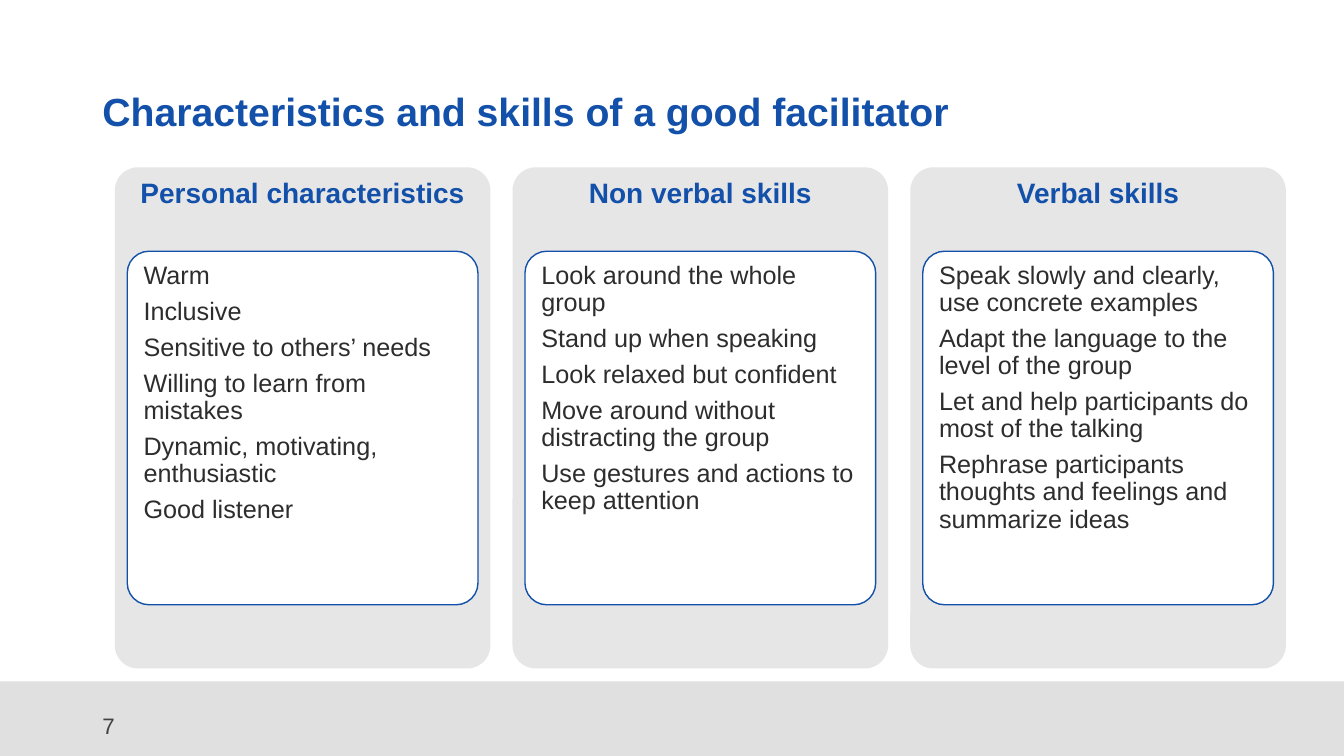
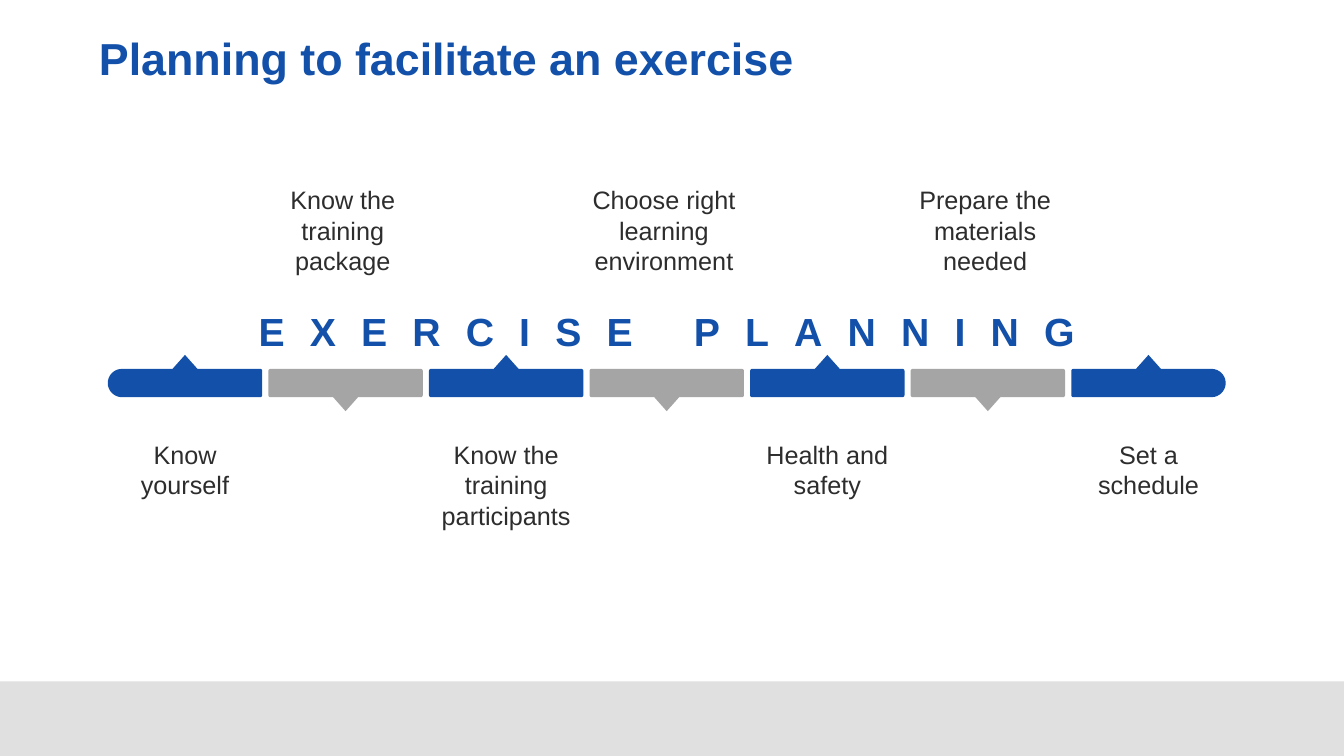
import math
from pptx import Presentation
from pptx import util as u
from pptx.dml.color import RGBColor
from pptx.enum import shapes, text

Pt = u.Pt
HUE = {"blue": "1250A9", "band": "E0E0E0", "card": "E7E6E6", "white": "FFFFFF",
       "grey": "A5A5A5", "ink": "2D2D2D", "page": "424242"}
KIND = shapes.MSO_SHAPE
MID = text.MSO_ANCHOR.MIDDLE
TOP = text.MSO_ANCHOR.TOP
LEFT = text.PP_ALIGN.LEFT
CENTER = text.PP_ALIGN.CENTER


def write(shape, lines, size=18, hue="ink", bold=False, align=LEFT,
          anchor=TOP, lead=1.0, after=0, inset=None):
    frame = shape.text_frame
    frame.word_wrap = True
    frame.auto_size = text.MSO_AUTO_SIZE.NONE
    frame.vertical_anchor = anchor
    if inset is not None:
        frame.margin_left = frame.margin_right = Pt(inset)
        frame.margin_top = frame.margin_bottom = Pt(inset)
    for i, line in enumerate(lines):
        para = frame.add_paragraph() if i else frame.paragraphs[0]
        para.alignment = align
        para.line_spacing = lead
        para.space_before = Pt(0)
        para.space_after = Pt(after)
        run = para.add_run()
        run.text = line
        run.font.name = "Arial"
        run.font.size = Pt(size)
        run.font.bold = bold
        run.font.color.rgb = RGBColor.from_string(HUE[hue])


def paint(shape, fill, line=None):
    shape.shadow.inherit = False
    shape.fill.solid()
    shape.fill.fore_color.rgb = RGBColor.from_string(HUE[fill])
    if line:
        shape.line.color.rgb = RGBColor.from_string(HUE[line])
        shape.line.width = Pt(1)
    else:
        shape.line.fill.background()


deck = Presentation()
deck.slide_width, deck.slide_height = Pt(960), Pt(540)
form = deck.slide_layouts[5]

pages = []
for name, size, x, y, h in [
    ("Characteristics and skills of a good facilitator", 28, 66, 29, 104),
    ("Planning to facilitate an exercise", 32, 63.5, 0, 87),
]:
    page = deck.slides.add_slide(form)
    title = page.shapes.title
    title.left, title.top, title.width, title.height = Pt(x), Pt(y), Pt(828), Pt(h)
    write(title, [name], size=size, hue="blue", bold=True, anchor=MID, lead=0.9)
    pages.append(page)
skills, plan = pages

band = skills.shapes.add_shape(KIND.RECTANGLE, 0, Pt(486.7), Pt(960), Pt(53.3))
paint(band, "band")
form.shapes.element.insert(2, band.element)

num = skills.shapes.add_textbox(Pt(66), Pt(504), Pt(216), Pt(29))
write(num, ["7"], size=16, hue="page", anchor=MID)

cards = [
    ("Personal characteristics", [
        "Warm",
        "Inclusive",
        "Sensitive to others’ needs",
        "Willing to learn from mistakes",
        "Dynamic, motivating, enthusiastic",
        "Good listener"]),
    ("Non verbal skills", [
        "Look around the whole group",
        "Stand up when speaking",
        "Look relaxed but confident",
        "Move around without distracting the group",
        "Use gestures and actions to keep attention"]),
    ("Verbal skills", [
        "Speak slowly and clearly, use concrete examples",
        "Adapt the language to the level of the group",
        "Let and help participants do most of the talking",
        "Rephrase participants thoughts and feelings and summarize ideas"]),
]
for i, (head, items) in enumerate(cards):
    x = 82 + i * 284.1
    for lines, box, fill, line, style in [
        ([head], (x, 119.5, 268.3, 358), "card", None,
         dict(size=20, hue="blue", bold=True, align=CENTER)),
        (items, (x + 8.9, 179.5, 250.5, 252.5), "white", "blue", dict(after=6.2)),
    ]:
        card = skills.shapes.add_shape(KIND.ROUNDED_RECTANGLE, *map(Pt, box))
        card.adjustments[0] = 0.062
        paint(card, fill, line)
        write(card, lines, lead=0.9, **style)

steps = ["Know yourself", "Know the training package", "Know the training participants",
         "Choose right learning environment", "Health and safety",
         "Prepare the materials needed", "Set a schedule"]
top, low, wide, step = 263.5, 283.7, 110.3, 114.7
last = len(steps) - 1
for i, label in enumerate(steps):
    x = 77 + i * step
    end, mid = x + wide, x + wide / 2
    up = i % 2 == 0
    lead = 10.1 if i == 0 else 1.5
    tail = 10.1 if i == last else 1.5
    dots = []
    for turn, (cx, cy, r) in enumerate([
        (x + lead, top + lead, lead), (end - tail, top + tail, tail),
        (end - tail, low - tail, tail), (x + lead, low - lead, lead),
    ]):
        for k in range(9):
            a = math.radians(180 + 90 * turn + 11.25 * k)
            dots.append((cx + r * math.cos(a), cy + r * math.sin(a)))
        if turn == 0 and up:
            dots += [(mid - 8.9, top), (mid, top - 10), (mid + 8.9, top)]
        if turn == 2 and not up:
            dots += [(mid + 8.9, low), (mid, low + 10), (mid - 8.9, low)]
    dots = [(Pt(a), Pt(b)) for a, b in dots]
    pen = plan.shapes.build_freeform(*dots[0])
    pen.add_line_segments(dots[1:], close=True)
    paint(pen.convert_to_shape(), "blue" if up else "grey")

    note = plan.shapes.add_textbox(Pt(x if up else x - 2), Pt(314 if up else 132),
                                   Pt(wide), Pt(66))
    write(note, [label], align=CENTER, inset=0)

sign = plan.shapes.add_textbox(Pt(77), Pt(219.5), Pt(798.5), Pt(38))
write(sign, ["EXERCISE PLANNING"], size=28, hue="blue", bold=True, align=CENTER, lead=0.9)
sign.element.xpath(".//a:rPr")[0].set("spc", "1800")

deck.save("out.pptx")
